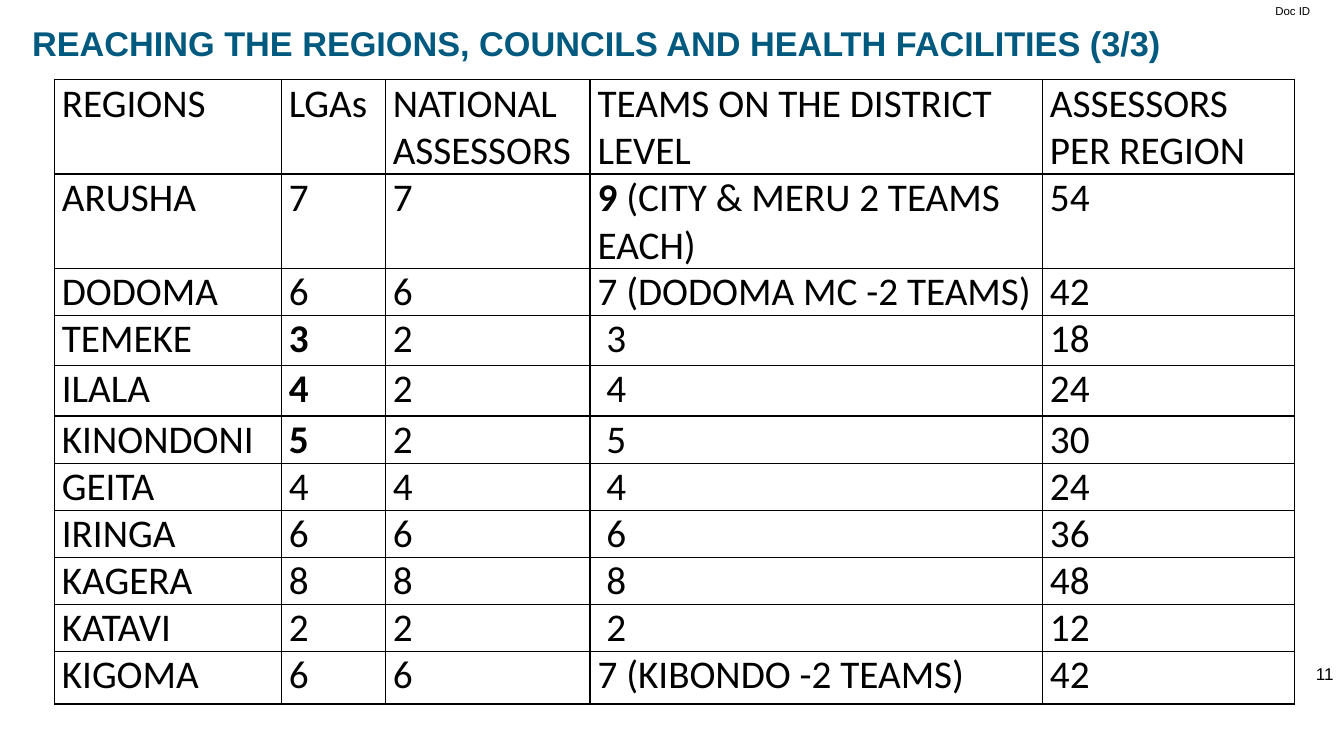
from typing import NamedTuple, Union

import lxml.etree
import pptx
import pptx.dml.color
import pptx.enum.text
import pptx.oxml.ns
import pptx.util

Cm = pptx.util.Cm
ALIGN = pptx.enum.text.PP_ALIGN
ANCHOR = pptx.enum.text.MSO_ANCHOR

COLORS = {"title": "00597E", "text": "000000", "border": "000000"}


class Bold(NamedTuple):
    """Cell text that opens in bold and may go on in plain type."""
    head: str
    tail: str = ""


Entry = Union[str, Bold]


class Row(NamedTuple):
    height: float
    region: Entry
    lgas: Entry
    nation: Entry
    teams: Entry
    total: Entry


class Label(NamedTuple):
    text: str
    left: float
    top: float
    width: float
    height: float
    size: float
    inset: tuple[float, float]


WIDTHS = (5.72, 2.62, 5.16, 11.4, 6.35)
ROWS = (
    Row(2.26, "REGIONS", "LGAs", "NATIONAL ASSESSORS",
        "TEAMS ON THE DISTRICT LEVEL", "ASSESSORS PER REGION"),
    Row(2.21, "ARUSHA", "7", "7",
        Bold("9 ", "(CITY & MERU 2 TEAMS EACH)"), "54"),
    Row(1.12, "DODOMA", "6", "6", "7 (DODOMA MC -2 TEAMS)", "42"),
    Row(1.27, "TEMEKE", Bold("3"), "2", " 3", "18"),
    Row(1.27, "ILALA", Bold("4"), "2", " 4", "24"),
    Row(0.89, "KINONDONI", Bold("5"), "2", " 5", "30"),
    Row(0.94, "GEITA", "4", "4", " 4", "24"),
    Row(0.84, "IRINGA", "6", "6", " 6", "36"),
    Row(0.81, "KAGERA", "8", "8", " 8", "48"),
    Row(0.84, "KATAVI", "2", "2", " 2", "12"),
    Row(1.32, "KIGOMA", "6", "6", "7 (KIBONDO -2 TEAMS)", "42"),
)
LABELS = (
    Label("Doc ID", 30.53, 0.1, 2.49, 0.36, 8.2, (0, 0)),
    Label("11", 25.96, 16.59, 7.9, 1.02, 12.2, (0.25, 0.13)),
)


def set_font(par, name: str, size: float, color: str) -> None:
    par.font.name = name
    par.font.size = pptx.util.Pt(size)
    par.font.color.rgb = pptx.dml.color.RGBColor.from_string(COLORS[color])


def set_inset(frame, side: float, edge: float) -> None:
    frame.margin_left = frame.margin_right = Cm(side)
    frame.margin_top = frame.margin_bottom = Cm(edge)


def add_title(slide, text: str) -> None:
    title = slide.shapes.title
    title.left, title.top = Cm(0.56), Cm(0.43)
    title.width, title.height = Cm(32.74), Cm(1.3)
    frame = title.text_frame
    frame.text = text
    frame.word_wrap = True
    frame.auto_size = pptx.enum.text.MSO_AUTO_SIZE.SHAPE_TO_FIT_TEXT
    frame.vertical_anchor = ANCHOR.MIDDLE
    set_inset(frame, 0.25, 0.13)
    par = frame.paragraphs[0]
    par.alignment = ALIGN.LEFT
    set_font(par, "Arial", 24.5, "title")
    par.font.bold = True


def add_label(slide, label: Label) -> None:
    box = slide.shapes.add_textbox(Cm(label.left), Cm(label.top),
                                   Cm(label.width), Cm(label.height))
    frame = box.text_frame
    frame.text = label.text
    frame.word_wrap = True
    set_inset(frame, *label.inset)
    par = frame.paragraphs[0]
    par.alignment = ALIGN.RIGHT
    set_font(par, "Arial", label.size, "text")


def add_borders(cell) -> None:
    props = cell._tc.get_or_add_tcPr()
    qn = pptx.oxml.ns.qn
    for side in ("lnL", "lnR", "lnT", "lnB"):
        line = lxml.etree.SubElement(props, qn(f"a:{side}"),
                                     w=str(pptx.util.Pt(1)))
        fill = lxml.etree.SubElement(line, qn("a:solidFill"))
        lxml.etree.SubElement(fill, qn("a:srgbClr"), val=COLORS["border"])


def fill_cell(cell, entry: Entry) -> None:
    add_borders(cell)
    cell.fill.background()
    set_inset(cell, 0.19, 0)
    par = cell.text_frame.paragraphs[0]
    set_font(par, "Calibri", 28, "text")
    if isinstance(entry, str):
        par.add_run().text = entry
    elif entry.tail:
        head = par.add_run()
        head.text = entry.head
        head.font.bold = True
        par.add_run().text = entry.tail
    else:
        par.add_run().text = entry.head
        par.font.bold = True


def add_grid(slide) -> None:
    grid = slide.shapes.add_table(
        len(ROWS), len(WIDTHS), Cm(1.37), Cm(2.01), Cm(sum(WIDTHS)),
        Cm(sum(row.height for row in ROWS))).table
    grid.first_row = grid.horz_banding = False
    for column, width in zip(grid.columns, WIDTHS):
        column.width = Cm(width)
    for line, row in zip(grid.rows, ROWS):
        line.height = Cm(row.height)
        for cell, entry in zip(line.cells, row[1:]):
            fill_cell(cell, entry)


def main() -> None:
    deck = pptx.Presentation()
    deck.slide_width, deck.slide_height = Cm(33.87), Cm(19.05)
    slide = deck.slides.add_slide(deck.slide_layouts[5])
    add_title(slide,
              "REACHING THE REGIONS, COUNCILS AND HEALTH FACILITIES (3/3)")
    for label in LABELS:
        add_label(slide, label)
    add_grid(slide)
    deck.save("out.pptx")


if __name__ == "__main__":
    main()
